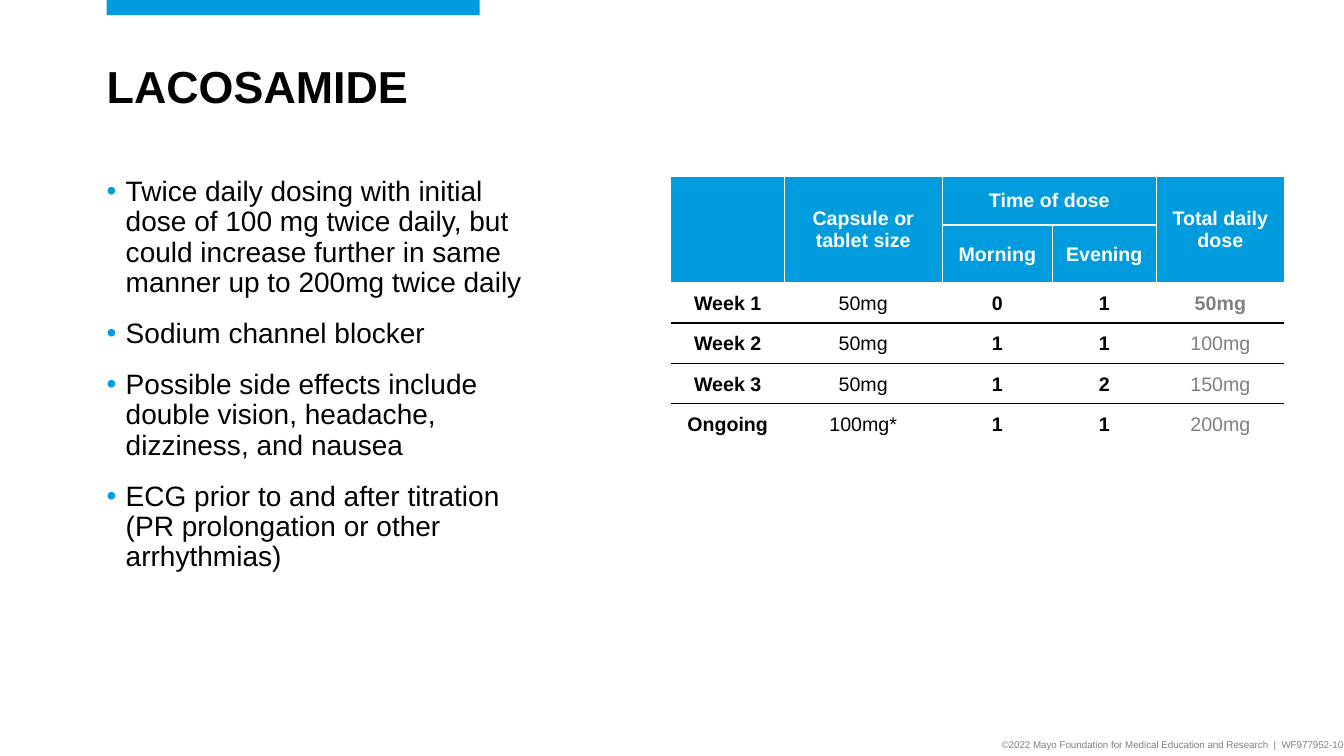
from dataclasses import dataclass

from lxml import etree
from pptx import Presentation
from pptx.dml.color import RGBColor
from pptx.enum.shapes import MSO_SHAPE
from pptx.enum.text import MSO_ANCHOR, PP_ALIGN
from pptx.oxml.ns import qn
from pptx.util import Cm, Pt

RECTANGLE = MSO_SHAPE.RECTANGLE
TOP, MIDDLE = MSO_ANCHOR.TOP, MSO_ANCHOR.MIDDLE
LEFT, CENTER, RIGHT = PP_ALIGN.LEFT, PP_ALIGN.CENTER, PP_ALIGN.RIGHT
PLAIN_TABLE_STYLE = "{2D5ABB26-0587-4C30-8999-92F81FD0307C}"


@dataclass(frozen=True)
class Theme:
    font: str = "Arial"
    accent: str = "009CDE"
    ink: str = "000000"
    muted: str = "808080"
    paper: str = "FFFFFF"
    title_size: int = 32
    body_size: int = 20
    table_size: int = 14
    footer_size: int = 7


HEADER = [
    ["", "Capsule or tablet size", "Time of dose", "", "Total daily dose"],
    ["", "", "Morning", "Evening", ""],
]
SCHEDULE = [
    ["Week 1", "50mg", "0", "1", "50mg"],
    ["Week 2", "50mg", "1", "1", "100mg"],
    ["Week 3", "50mg", "1", "2", "150mg"],
    ["Ongoing", "100mg*", "1", "1", "200mg"],
]
HEADER_MERGES = [((0, 0), (1, 0)), ((0, 1), (1, 1)), ((0, 2), (0, 3)), ((0, 4), (1, 4))]
COLUMN_WIDTHS = [2.84, 3.99, 2.77, 2.62, 3.23]
ROW_HEIGHTS = [1.22] * len(HEADER) + [1.02] * len(SCHEDULE)
SIZE_COLUMN, TOTAL_COLUMN = 1, 4
TIME_COLUMNS = (2, 3)
POINTS = [
    "Twice daily dosing with initial dose of 100 mg twice daily, but could "
    "increase further in same manner up to 200mg twice daily",
    "Sodium channel blocker",
    "Possible side effects include double vision, headache, dizziness, and nausea",
    "ECG prior to and after titration (PR prolongation or other arrhythmias)",
]


class SlideBuilder:
    def __init__(self, slide, theme):
        self.slide = slide
        self.theme = theme

    def style(self, paragraph, size, color, bold=False, align=LEFT):
        paragraph.alignment = align
        for run in paragraph.runs:
            run.font.name = self.theme.font
            run.font.size = Pt(size)
            run.font.bold = bold
            run.font.color.rgb = RGBColor.from_string(color)

    def margins(self, holder, left, top, right, bottom):
        holder.margin_left, holder.margin_right = Cm(left), Cm(right)
        holder.margin_top, holder.margin_bottom = Cm(top), Cm(bottom)

    def bar(self, left, top, width, height):
        bar = self.slide.shapes.add_shape(RECTANGLE, Cm(left), Cm(top), Cm(width), Cm(height))
        bar.shadow.inherit = False
        bar.fill.solid()
        bar.fill.fore_color.rgb = RGBColor.from_string(self.theme.accent)
        bar.line.fill.background()

    def text(self, content, box, size, color, bold=False, align=LEFT,
             anchor=TOP, insets=(0, 0.13, 0, 0.13), spacing=1.0):
        frame = self.slide.shapes.add_textbox(*map(Cm, box)).text_frame
        frame.word_wrap = True
        frame.vertical_anchor = anchor
        self.margins(frame, *insets)
        frame.text = content
        for paragraph in frame.paragraphs:
            paragraph.line_spacing = spacing
            self.style(paragraph, size, color, bold, align)
        return frame

    def bullets(self, points, box, indent=0.48, gap=15):
        frame = self.text("\n".join(points), box, self.theme.body_size, self.theme.ink,
                          insets=(0, 0, 0, 0.13), spacing=0.9)
        for index, paragraph in enumerate(frame.paragraphs):
            properties = paragraph._p.get_or_add_pPr()
            properties.set("marL", str(Cm(indent)))
            properties.set("indent", str(-Cm(indent)))
            if index:
                paragraph.space_before = Pt(gap)
            bullet_color = etree.SubElement(properties, qn("a:buClr"))
            etree.SubElement(bullet_color, qn("a:srgbClr"), val=self.theme.accent)
            etree.SubElement(properties, qn("a:buFont"), typeface=self.theme.font)
            etree.SubElement(properties, qn("a:buChar"), char="•")

    def borders(self, cell, sides, color):
        properties = cell._tc.get_or_add_tcPr()
        for side in "LRTB":
            if side in sides:
                line = etree.SubElement(properties, qn(f"a:ln{side}"), w=str(Pt(1)))
                fill = etree.SubElement(line, qn("a:solidFill"))
                etree.SubElement(fill, qn("a:srgbClr"), val=color)

    def cell(self, cell, content, color, bold, insets):
        cell.vertical_anchor = MIDDLE
        self.margins(cell, *insets)
        cell.text = content
        self.style(cell.text_frame.paragraphs[0], self.theme.table_size, color, bold, CENTER)

    def header_cell(self, cell, row, column, content):
        sides = "L" * (column > 0) + "R" * (column < TOTAL_COLUMN)
        if column in TIME_COLUMNS:
            sides += "T" if row else "B"
        self.borders(cell, sides, self.theme.paper)
        cell.fill.solid()
        cell.fill.fore_color.rgb = RGBColor.from_string(self.theme.accent)
        insets = (0.05, 0.05, 0.05, 0) if row else (0.23, 0.13, 0.23, 0.13)
        self.cell(cell, content, self.theme.paper, True, insets)

    def schedule_cell(self, cell, row, column, content):
        sides = "T" * (row > 0) + "B" * (row < len(SCHEDULE) - 1)
        self.borders(cell, sides, self.theme.ink)
        cell.fill.background()
        is_total = column == TOTAL_COLUMN
        bold = column != SIZE_COLUMN and (not is_total or row == 0)
        color = self.theme.muted if is_total else self.theme.ink
        self.cell(cell, content, color, bold, (0.05, 0.05, 0.05, 0))

    def dose_table(self, left, top):
        frame = self.slide.shapes.add_table(
            len(ROW_HEIGHTS), len(COLUMN_WIDTHS), Cm(left), Cm(top),
            Cm(sum(COLUMN_WIDTHS)), Cm(sum(ROW_HEIGHTS)))
        table = frame.table
        table._tbl.tblPr.find(qn("a:tableStyleId")).text = PLAIN_TABLE_STYLE
        table.horz_banding = False
        for column, width in zip(table.columns, COLUMN_WIDTHS):
            column.width = Cm(width)
        for row, height in zip(table.rows, ROW_HEIGHTS):
            row.height = Cm(height)
        for first, last in HEADER_MERGES:
            table.cell(*first).merge(table.cell(*last))
        sections = [(0, HEADER, self.header_cell), (len(HEADER), SCHEDULE, self.schedule_cell)]
        for offset, rows, draw in sections:
            for row, contents in enumerate(rows):
                for column, content in enumerate(contents):
                    draw(table.cell(offset + row, column), row, column, content)


def main():
    theme = Theme()
    presentation = Presentation()
    presentation.slide_width, presentation.slide_height = Cm(33.87), Cm(19.05)
    slide = presentation.slides.add_slide(presentation.slide_layouts[6])
    builder = SlideBuilder(slide, theme)
    builder.text("©2022 Mayo Foundation for Medical Education and Research  |  WF977952-10",
                 (23.39, 18.49, 10.46, 0.56), theme.footer_size, theme.muted,
                 align=RIGHT, anchor=MIDDLE, insets=(0, 0.13, 0.0, 0.13))
    builder.bar(2.69, 0, 9.4, 0.38)
    builder.text("LACOSAMIDE", (2.69, 1.5, 13.26, 1.63), theme.title_size, theme.ink,
                 bold=True, spacing=0.9)
    builder.bullets(POINTS, (2.69, 4.47, 11.15, 11.07))
    builder.dose_table(16.92, 4.45)
    presentation.save("out.pptx")


if __name__ == "__main__":
    main()
